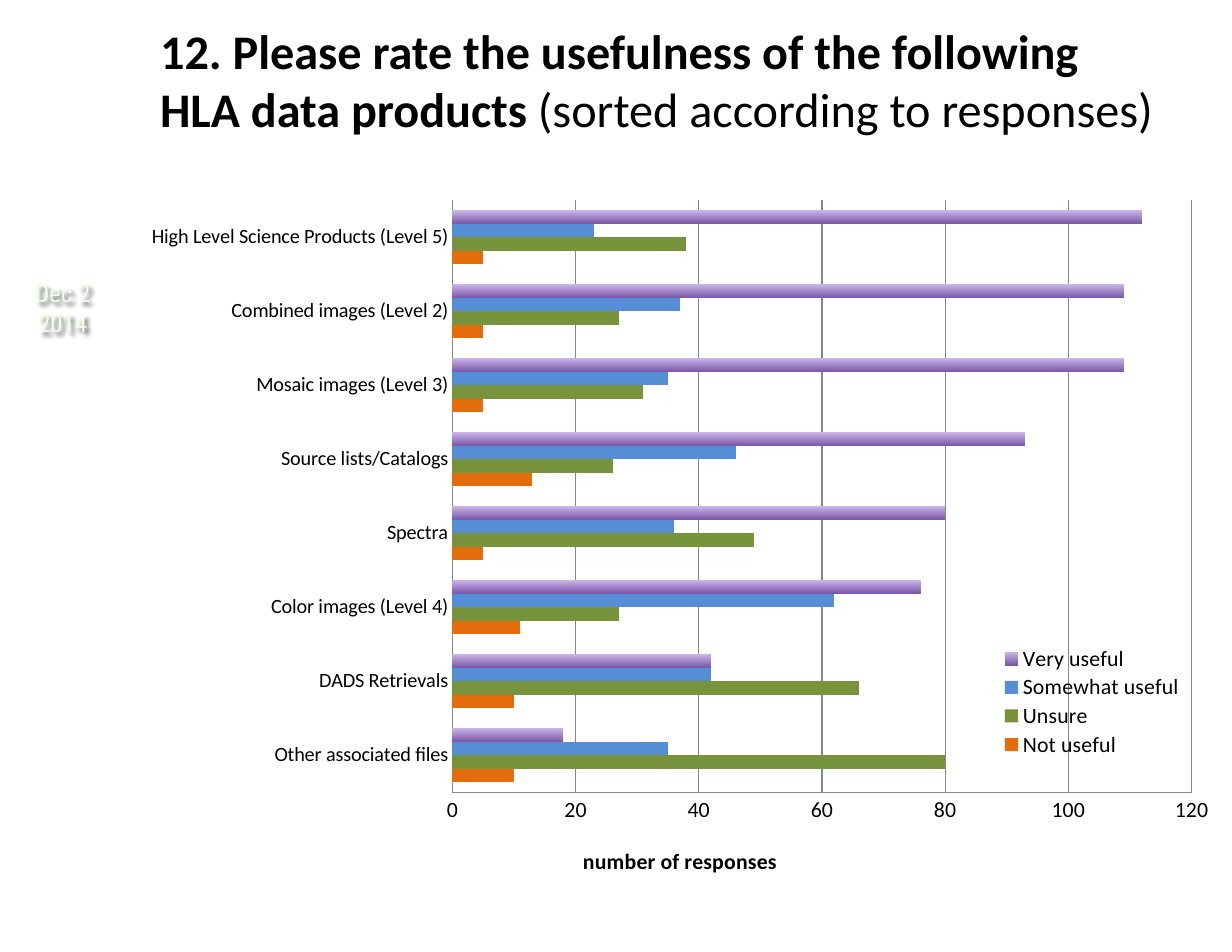
"""Build the survey slide rating the usefulness of HLA data products."""
from pptx import Presentation
from pptx import util as u
from pptx.chart.data import CategoryChartData
from pptx.dml.color import RGBColor
from pptx.enum import chart as ch, text
from pptx.oxml import parse_xml
from pptx.oxml.ns import nsdecls, qn

COLORS = {
    "text": "000000", "date": "EEFFE8", "shadow": "000000", "grid": "868686",
    "orange": "E46C0A", "green": "77933C", "blue": "558ED5",
    "violet_top": "C9B5E8", "violet_bottom": "7B57A8",
}
FONT = "Calibri"
TITLE = [
    ("12. Please rate the usefulness of the following HLA data products ", True),
    ("(sorted according to responses)", False),
]
DATE = "Dec 2 2014"
AXIS_TITLE = "number of responses"
CHART_BOX = (1.01, 1.58, 9.99, 6.29)
CATEGORIES = [
    "Other associated files", "DADS Retrievals", "Color images (Level 4)", "Spectra",
    "Source lists/Catalogs", "Mosaic images (Level 3)", "Combined images (Level 2)",
    "High Level Science Products (Level 5)",
]
SERIES = [
    ("Not useful", [10, 10, 11, 5, 13, 5, 5, 5], ["orange"]),
    ("Unsure", [80, 66, 27, 49, 26, 31, 27, 38], ["green"]),
    ("Somewhat useful", [35, 42, 62, 36, 46, 35, 37, 23], ["blue"]),
    ("Very useful", [18, 42, 76, 80, 93, 109, 109, 112], ["violet_top", "violet_bottom"]),
]


def color(name):
    return RGBColor.from_string(COLORS[name])


def style_font(font, size, name=FONT, color_name="text", bold=False):
    font.size, font.bold = u.Pt(size), bold
    font.color.rgb = color(color_name)
    font.name = name


def add_text_box(slide, box, runs, size, font_name, color_name, align, anchor):
    shape = slide.shapes.add_textbox(*map(u.Inches, box))
    frame = shape.text_frame
    frame.word_wrap, frame.vertical_anchor = True, anchor
    frame.margin_left = frame.margin_right = u.Inches(0.11)
    frame.margin_top = frame.margin_bottom = u.Inches(0.06)
    paragraph = frame.paragraphs[0]
    paragraph.alignment = align
    for content, bold in runs:
        run = paragraph.add_run()
        run.text = content
        style_font(run.font, size, font_name, color_name, bold)
    return shape


def add_shadow(shape):
    shape._element.spPr.append(parse_xml(
        f'<a:effectLst {nsdecls("a")}><a:outerShdw blurRad="38100" dist="38100" dir="2700000">'
        f'<a:srgbClr val="{COLORS["shadow"]}"><a:alpha val="60000"/></a:srgbClr>'
        '</a:outerShdw></a:effectLst>'))


def place(element, after, target="", **inches):
    """Set a manual chart layout from inches inside the chart box."""
    for old in element.findall(qn("c:layout")):
        element.remove(old)
    modes = "".join(f'<c:{axis}Mode val="edge"/>' for axis in "xy")
    inner = f'<c:layoutTarget val="{target}"/>' if target else ""
    width, height = CHART_BOX[2:]
    values = "".join(f'<c:{key} val="{value / (width if key in "xw" else height)}"/>'
                     for key, value in inches.items())
    layout = parse_xml(f'<c:layout {nsdecls("c")}><c:manualLayout>{inner}{modes}{values}'
                       '</c:manualLayout></c:layout>')
    if after:
        element.find(qn(after)).addnext(layout)
    else:
        element.insert(0, layout)


def style_axis(axis, size):
    axis.major_tick_mark = axis.minor_tick_mark = ch.XL_TICK_MARK.NONE
    axis.format.line.color.rgb = color("grid")
    style_font(axis.tick_labels.font, size)


def add_chart(slide):
    data = CategoryChartData()
    data.categories = CATEGORIES
    for name, values, _ in SERIES:
        data.add_series(name, values)
    box = map(u.Inches, CHART_BOX)
    chart = slide.shapes.add_chart(ch.XL_CHART_TYPE.BAR_CLUSTERED, *box, data).chart
    style_font(chart.font, 10)
    chart.has_title = False

    plot = chart.plots[0]
    plot.gap_width, plot.overlap, plot.vary_by_categories = 150, 0, False
    for series, (_, _, fills) in zip(plot.series, SERIES):
        fill = series.format.fill
        if len(fills) == 1:
            fill.solid()
            fill.fore_color.rgb = color(fills[0])
        else:
            fill.gradient()
            fill.gradient_angle = 270
            for stop, name in zip(fill.gradient_stops, fills):
                stop.color.rgb = color(name)

    style_axis(chart.category_axis, 13)
    value_axis = chart.value_axis
    style_axis(value_axis, 14)
    value_axis.minimum_scale, value_axis.maximum_scale, value_axis.major_unit = 0, 120, 20
    value_axis.has_major_gridlines = True
    value_axis.major_gridlines.format.line.color.rgb = color("grid")
    run = value_axis.axis_title.text_frame.paragraphs[0].add_run()
    run.text = AXIS_TITLE
    style_font(run.font, 14, bold=True)

    chart.has_legend = True
    chart.legend.position = ch.XL_LEGEND_POSITION.RIGHT
    chart.legend.include_in_layout = False
    style_font(chart.legend.font, 14)

    place(chart._chartSpace.chart.plotArea, None, "inner", x=3.03, y=0.21, w=6.6, h=5.29)
    place(value_axis.axis_title._element, "c:tx", x=4.16, y=5.94)
    place(chart.legend._element, "c:legendPos", x=7.84, y=4.17, w=1.8, h=1.04)


def main():
    presentation = Presentation()
    presentation.slide_width, presentation.slide_height = u.Inches(11), u.Inches(8.5)
    slide = presentation.slides.add_slide(presentation.slide_layouts[6])
    date = add_text_box(slide, (0.04, 2.42, 1.04, 0.65), [(DATE, False)], 16, "Roboto Condensed",
                        "date", text.PP_ALIGN.CENTER, text.MSO_ANCHOR.TOP)
    add_shadow(date)
    add_text_box(slide, (1.32, 0, 9.13, 1.42), TITLE, 31, FONT,
                 "text", text.PP_ALIGN.LEFT, text.MSO_ANCHOR.MIDDLE)
    add_chart(slide)
    presentation.save("out.pptx")


if __name__ == "__main__":
    main()
